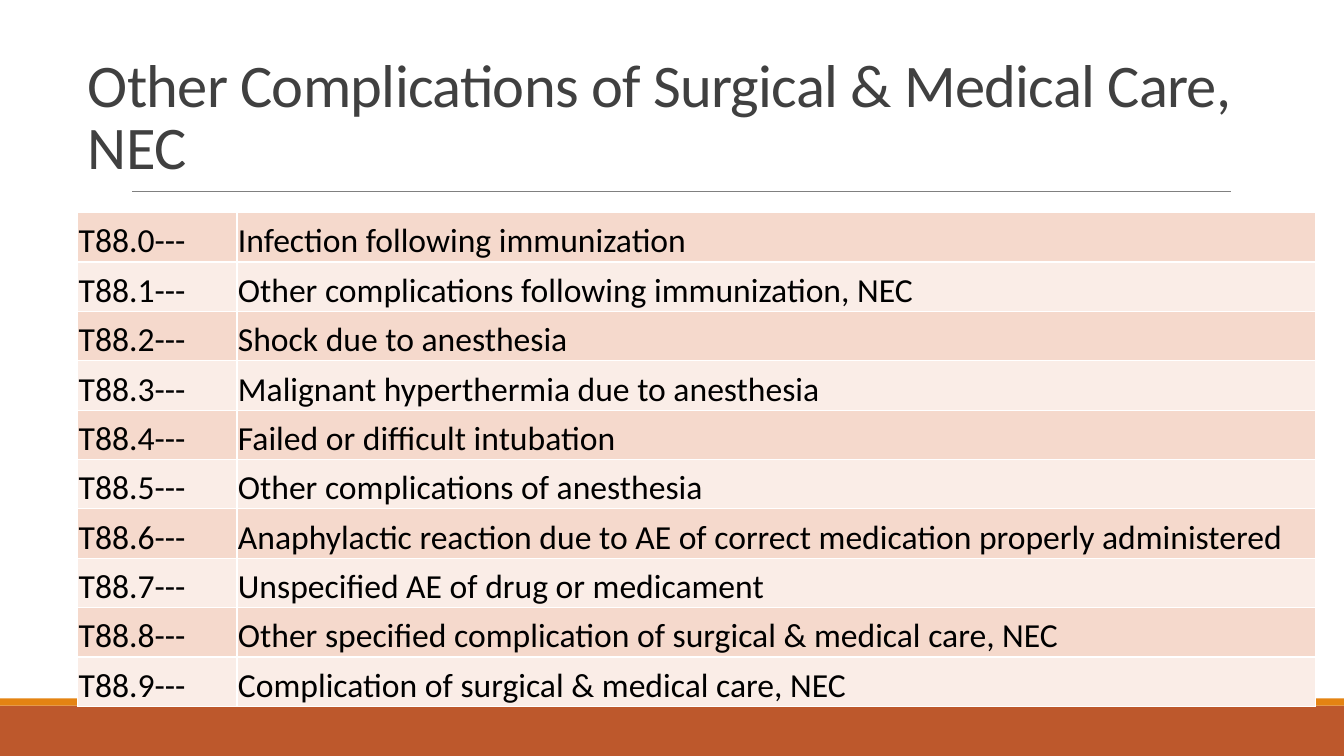
from dataclasses import dataclass

import pptx
import pptx.dml.color
import pptx.enum.shapes
import pptx.enum.text
import pptx.oxml.ns
import pptx.util
from lxml import etree

RGBColor = pptx.dml.color.RGBColor
BOTTOM = pptx.enum.text.MSO_ANCHOR.BOTTOM

EMU_PER_PX = 9144  # 100 px to the inch
FONT = "Calibri"
BLACK = RGBColor(0x00, 0x00, 0x00)
WHITE = RGBColor(0xFF, 0xFF, 0xFF)
TITLE_GREY = RGBColor(0x40, 0x40, 0x40)
RULE_GREY = RGBColor(0x80, 0x80, 0x80)
RUST = RGBColor(0xBD, 0x58, 0x2C)
ORANGE = RGBColor(0xE4, 0x83, 0x12)
BAND_FILLS = (RGBColor(0xF5, 0xD9, 0xCC), RGBColor(0xFA, 0xED, 0xE7))

TITLE = "Other Complications of Surgical & Medical Care, NEC"
COLUMN_WIDTHS = (158, 1070)
ROW_HEIGHT = 49
COMPLICATIONS = (
    "Infection following immunization",
    "Other complications following immunization, NEC",
    "Shock due to anesthesia",
    "Malignant hyperthermia due to anesthesia",
    "Failed or difficult intubation",
    "Other complications of anesthesia",
    "Anaphylactic reaction due to AE of correct medication properly administered",
    "Unspecified AE of drug or medicament",
    "Other specified complication of surgical & medical care, NEC",
    "Complication of surgical & medical care, NEC",
)


@dataclass(frozen=True)
class Bar:
    top: int
    height: int
    color: RGBColor


FOOTER_BARS = (Bar(700, 50, RUST), Bar(693, 7, ORANGE))


def px(n: int) -> pptx.util.Emu:
    return pptx.util.Emu(n * EMU_PER_PX)


def write_text(tf, text: str, *, size: float, color: RGBColor,
               line_spacing: float = 1.0, tracking: int = 0) -> None:
    """Fill the first paragraph; tracking is in hundredths of a point."""
    p = tf.paragraphs[0]
    p.line_spacing = line_spacing
    r = p.add_run()
    r.text = text
    r.font.name = FONT
    r.font.size = pptx.util.Pt(size)
    r.font.color.rgb = color
    if tracking:
        r._r.get_or_add_rPr().set("spc", str(tracking))


def add_bar(s, bar: Bar, width: int) -> None:
    sp = s.shapes.add_shape(pptx.enum.shapes.MSO_SHAPE.RECTANGLE,
                            px(0), px(bar.top), px(width), px(bar.height))
    sp.shadow.inherit = False
    sp.fill.solid()
    sp.fill.fore_color.rgb = bar.color
    sp.line.fill.background()


def add_rule(s, left: int, right: int, y: int) -> None:
    line = s.shapes.add_connector(pptx.enum.shapes.MSO_CONNECTOR.STRAIGHT,
                                  px(left), px(y), px(right), px(y))
    line.line.color.rgb = RULE_GREY
    line.line.width = pptx.util.Pt(0.5)
    etree.SubElement(line._element.spPr, pptx.oxml.ns.qn("a:effectLst"))


def set_title(s) -> None:
    sp = s.shapes.title
    sp.left, sp.top, sp.width, sp.height = px(77), px(40), px(1177), px(145)
    tf = sp.text_frame
    tf.word_wrap = True
    tf.auto_size = pptx.enum.text.MSO_AUTO_SIZE.NONE
    tf.vertical_anchor = BOTTOM
    write_text(tf, TITLE, size=43.2, color=TITLE_GREY,
               line_spacing=0.85, tracking=-50)
    tf.paragraphs[0].alignment = pptx.enum.text.PP_ALIGN.LEFT


def add_borders(cell, color: RGBColor, points: float) -> None:
    qn = pptx.oxml.ns.qn
    tc_pr = cell._tc.get_or_add_tcPr()
    for side in ("lnL", "lnR", "lnT", "lnB"):
        ln = etree.SubElement(tc_pr, qn(f"a:{side}"),
                              w=str(pptx.util.Pt(points)))
        fill = etree.SubElement(ln, qn("a:solidFill"))
        etree.SubElement(fill, qn("a:srgbClr"), val=str(color))


def format_cell(cell, text: str, fill: RGBColor) -> None:
    cell.margin_left = cell.margin_right = cell.margin_top = px(1)
    cell.margin_bottom = px(0)
    cell.vertical_anchor = BOTTOM
    add_borders(cell, WHITE, 1)
    cell.fill.solid()
    cell.fill.fore_color.rgb = fill
    write_text(cell.text_frame, text, size=24, color=BLACK)


def add_code_table(s) -> None:
    count = len(COMPLICATIONS)
    table = s.shapes.add_table(count, len(COLUMN_WIDTHS), px(77), px(211),
                               px(sum(COLUMN_WIDTHS)),
                               px(ROW_HEIGHT * count)).table
    table.first_row = table.horz_banding = False
    for column, width in zip(table.columns, COLUMN_WIDTHS):
        column.width = px(width)
    for i, description in enumerate(COMPLICATIONS):
        table.rows[i].height = px(ROW_HEIGHT)
        for j, text in enumerate((f"T88.{i}---", description)):
            format_cell(table.cell(i, j), text, BAND_FILLS[i % 2])


def main() -> None:
    prs = pptx.Presentation()
    prs.slide_width, prs.slide_height = px(1333), px(750)
    s = prs.slides.add_slide(prs.slide_layouts.get_by_name("Title Only"))
    for bar in FOOTER_BARS:
        add_bar(s, bar, 1333)
    add_rule(s, 131, 1221, 190)
    add_code_table(s)
    set_title(s)
    prs.save("out.pptx")


if __name__ == "__main__":
    main()
